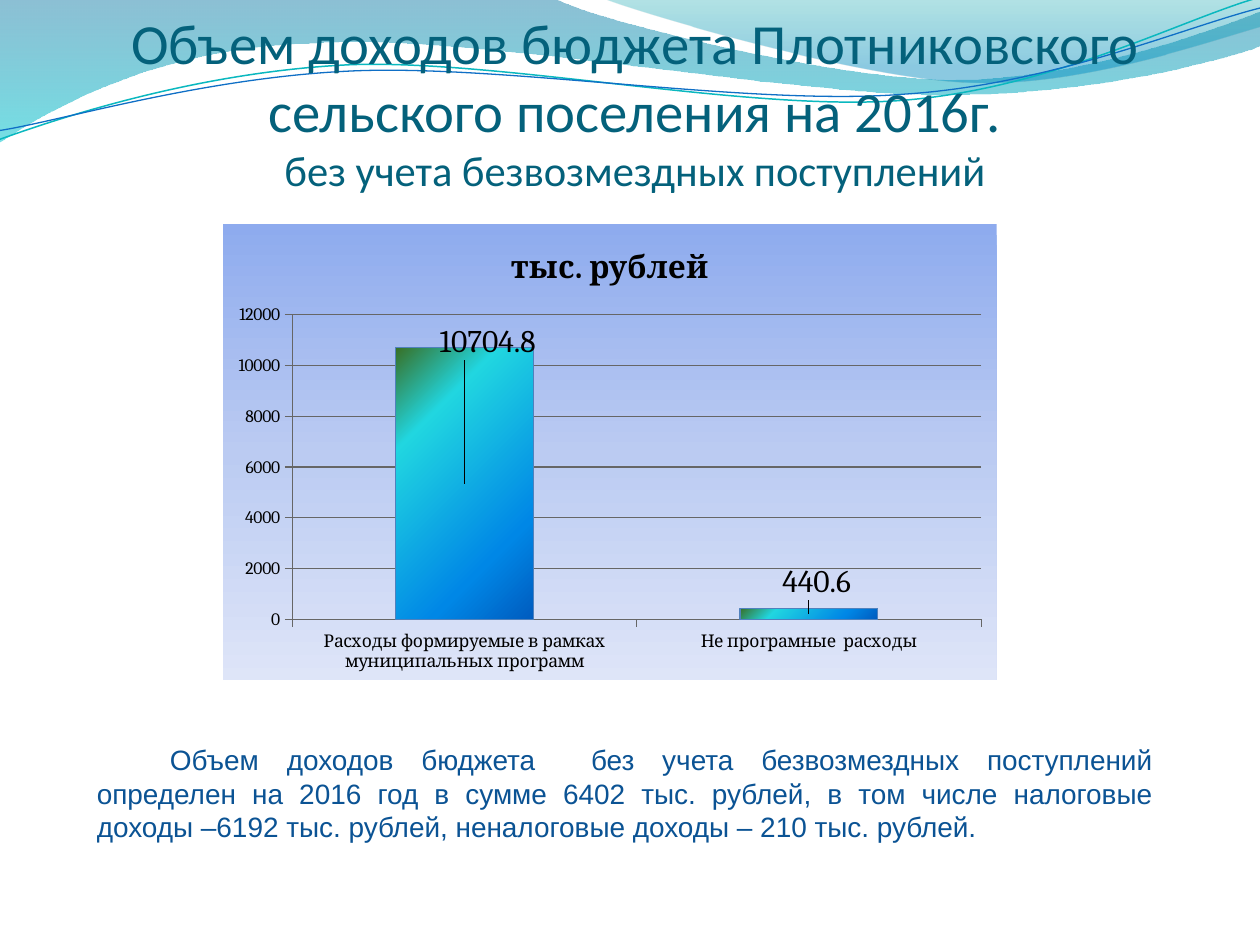
from dataclasses import dataclass

from lxml import etree
from pptx import Presentation
from pptx.chart.data import CategoryChartData
from pptx.dml.color import RGBColor
from pptx.enum.chart import XL_CHART_TYPE, XL_LABEL_POSITION, XL_TICK_MARK
from pptx.enum.text import MSO_ANCHOR, MSO_AUTO_SIZE, PP_ALIGN
from pptx.oxml import parse_xml
from pptx.oxml.ns import nsdecls, qn
from pptx.util import Inches, Pt

COLUMN_STACKED = XL_CHART_TYPE.COLUMN_STACKED
LABEL_CENTER = XL_LABEL_POSITION.CENTER
TICK_OUTSIDE = XL_TICK_MARK.OUTSIDE
ANCHOR_BOTTOM, ANCHOR_MIDDLE = MSO_ANCHOR.BOTTOM, MSO_ANCHOR.MIDDLE
ALIGN_CENTER, ALIGN_JUSTIFY = PP_ALIGN.CENTER, PP_ALIGN.JUSTIFY
FIT_NONE, FIT_SHAPE = MSO_AUTO_SIZE.NONE, MSO_AUTO_SIZE.SHAPE_TO_FIT_TEXT


@dataclass(frozen=True)
class Theme:
    title_color = RGBColor.from_string("04617B")
    body_color = RGBColor.from_string("0B5394")
    chart_text = RGBColor.from_string("000000")
    axis_line = RGBColor.from_string("666666")
    bar_line = RGBColor.from_string("4F81BD")
    teal_line = RGBColor.from_string("0AB8BF")
    blue_line = RGBColor.from_string("0F6FC6")
    # Gradient stops: position, colour, opacity (position and opacity in percent)
    left_wave = [(0, "0074A1", 45), (100, "00C6CF", 55)]
    right_wave = [(0, "00A1A9", 30), (80, "008BBF", 45)]
    chart_area = [(0, "8EABEE", 100), (50, "BBCBF2", 100), (100, "DEE5F8", 100)]
    bars = [(0, "387026", 100), (25, "21D6E0", 100),
            (75, "0087E6", 100), (100, "005CBF", 100)]
    title_font, body_font, chart_font = "Calibri", "Arial", "Cambria"
    title_size, subtitle_size, body_size = Pt(32.4), Pt(24.3), Pt(16)
    axis_size, label_size = Pt(10), Pt(18)


theme = Theme()


def set_gradient(properties, stops, angle):
    """Swap the noFill in a shape-properties element for a linear gradient."""
    gradient = etree.Element(qn("a:gradFill"), rotWithShape="1")
    stop_list = etree.SubElement(gradient, qn("a:gsLst"))
    for position, color, opacity in stops:
        stop = etree.SubElement(stop_list, qn("a:gs"), pos=str(position * 1000))
        rgb = etree.SubElement(stop, qn("a:srgbClr"), val=color)
        if opacity < 100:
            etree.SubElement(rgb, qn("a:alpha"), val=str(opacity * 1000))
    etree.SubElement(gradient, qn("a:lin"), ang=str(angle * 60000), scaled="0")
    properties.replace(properties.find(qn("a:noFill")), gradient)


def add_curve(slide, segments, closed):
    """Draw an outline; 2-number segments are points, 6-number ones are Béziers."""
    anchors = [(Inches(segment[-2]), Inches(segment[-1])) for segment in segments]
    builder = slide.shapes.build_freeform(*anchors[0], scale=1.0)
    builder.add_line_segments(anchors[1:], close=closed)
    shape = builder.convert_to_shape()
    shape.shadow.inherit = False
    shape.fill.background()
    lines = list(shape._element.iter(qn("a:lnTo")))
    for segment, line in zip(segments[1:], lines):
        if len(segment) == 2:
            continue
        bezier = etree.Element(qn("a:cubicBezTo"))
        for x, y in zip(segment[::2], segment[1::2]):
            etree.SubElement(bezier, qn("a:pt"), x=str(Inches(x) - shape.left),
                             y=str(Inches(y) - shape.top))
        line.getparent().replace(line, bezier)
    return shape


presentation = Presentation()
presentation.slide_width, presentation.slide_height = Inches(10), Inches(7.5)
slide = presentation.slides.add_slide(presentation.slide_layouts[5])

# Waves across the top
left_wave = [
    (0, 0), (4.4, -0.01),
    (4.76, 0.17, 6.64, 0.63, 7.58, 0.63), (8.53, 0.63, 9.58, 0.26, 10, 0.09),
    (10.01, 0.36),
    (9.83, 0.44, 8.7, 0.76, 7.46, 0.75), (6.22, 0.75, 3.82, 0.28, 2.57, 0.34),
    (1.29, 0.36, 0.46, 0.83, -0.01, 1.13),
]
right_wave = [
    (4.79, -0.01),
    (5.09, 0.11, 6.82, 0.62, 7.69, 0.65), (8.56, 0.69, 9.61, 0.32, 10, 0.21),
    (10, 0),
]
for outline, stops in ((left_wave, theme.left_wave), (right_wave, theme.right_wave)):
    wave = add_curve(slide, outline, closed=True)
    wave.line.fill.background()
    set_gradient(wave._element.spPr, stops, 90)

teal_curve = [
    (-0.02, 0.87), (0.47, 0.72, 1.58, 0.41, 2.78, 0.41),
    (3.96, 0.42, 5.91, 0.93, 7.12, 0.9), (8.32, 0.87, 9.4, 0.36, 10, 0.22),
]
blue_curve = [
    (-0.02, 0.8), (0.46, 0.75, 1.64, 0.45, 2.83, 0.46),
    (4.03, 0.47, 5.96, 0.89, 7.16, 0.85), (8.35, 0.83, 9.42, 0.42, 10.02, 0.3),
]
for outline, color, width in ((teal_curve, theme.teal_line, 0.85),
                              (blue_curve, theme.blue_line, 0.75)):
    curve = add_curve(slide, outline, closed=False)
    curve.rotation = 357.3
    curve.line.color.rgb = color
    curve.line.width = Pt(width)

# Chart
chart_data = CategoryChartData()
chart_data.categories = ["Расходы формируемые в рамках муниципальных программ",
                         "Не програмные  расходы"]
chart_data.add_series("тыс. рублей", [10704.8, 440.6])
chart = slide.shapes.add_chart(COLUMN_STACKED, Inches(1.77), Inches(1.78),
                               Inches(6.14), Inches(3.62), chart_data).chart
chart.has_legend = False
chart.font.name = theme.chart_font
chart.font.size = theme.axis_size
chart.font.color.rgb = theme.chart_text
chart_area = parse_xml(f'<c:spPr {nsdecls("c", "a")}><a:noFill/>'
                       '<a:ln><a:noFill/></a:ln></c:spPr>')
chart._chartSpace.find(qn("c:txPr")).addprevious(chart_area)
set_gradient(chart_area, theme.chart_area, 90)

chart.has_title = True
chart.chart_title.include_in_layout = False
chart_heading = chart.chart_title.text_frame
chart_heading.text = "тыс. рублей"
heading_font = chart_heading.paragraphs[0].font
heading_font.name = theme.chart_font
heading_font.size = theme.label_size
heading_font.bold = True
heading_font.color.rgb = theme.chart_text

chart.value_axis.has_major_gridlines = True
for axis in (chart.category_axis, chart.value_axis):
    axis.major_tick_mark = TICK_OUTSIDE
    axis.format.line.color.rgb = theme.axis_line
chart.value_axis.major_gridlines.format.line.color.rgb = theme.axis_line

plot = chart.plots[0]
plot.gap_width, plot.overlap = 150, 100
plot.vary_by_categories = False
series = plot.series[0]
series.format.fill.background()
series.format.line.color.rgb = theme.bar_line
series.format.line.width = Pt(0.75)
set_gradient(series._element.find(qn("c:spPr")), theme.bars, 45)

# Labels are moved from the bar centres by fractions of the chart size
label_offsets = [(0.03, -0.31), (0.01, -0.07)]
series.data_labels.show_value = True
series.data_labels.font.size = theme.label_size
for index in range(len(label_offsets)):
    label = series.points[index].data_label
    label.font.size = theme.label_size
    label.position = LABEL_CENTER
for label, (x, y) in zip(series._element.iter(qn("c:dLbl")), label_offsets):
    label.insert(1, parse_xml(
        f'<c:layout {nsdecls("c")}><c:manualLayout>'
        f'<c:x val="{x}"/><c:y val="{y}"/></c:manualLayout></c:layout>'))
labels = series._element.find(qn("c:dLbls"))
for leader_lines in labels.findall(qn("c:showLeaderLines")):
    labels.remove(leader_lines)
labels.append(parse_xml(
    f'<c:extLst {nsdecls("c")}><c:ext uri="{{CE6537A1-D6FC-4f65-9D91-7224C49458BB}}" '
    'xmlns:c15="http://schemas.microsoft.com/office/drawing/2012/chart">'
    '<c15:showLeaderLines val="0"/></c:ext></c:extLst>'))

# Title
title = slide.shapes.title
slide.shapes._spTree.append(title._element)
title.left, title.top = Inches(0.5), Inches(0.77)
title.width, title.height = Inches(9.08), Inches(0.78)
frame = title.text_frame
frame.word_wrap = True
frame.auto_size = FIT_NONE
frame.vertical_anchor = ANCHOR_BOTTOM
frame.margin_left = frame.margin_right = frame.margin_bottom = 0
frame.margin_top = Inches(0.05)
paragraph = frame.paragraphs[0]
paragraph.alignment = ALIGN_CENTER
paragraph.font.name = theme.title_font
paragraph.font.color.rgb = theme.title_color
run = paragraph.add_run()
run.text = "Объем доходов бюджета Плотниковского сельского поселения на 2016г."
run.font.size = theme.title_size
paragraph.add_line_break()
run = paragraph.add_run()
run.text = "без учета безвозмездных поступлений"
run.font.size = theme.subtitle_size

# Summary
summary = slide.shapes.add_textbox(Inches(0.67), Inches(5.84), Inches(8.58), Inches(0.91))
frame = summary.text_frame
frame.word_wrap = True
frame.auto_size = FIT_SHAPE
frame.vertical_anchor = ANCHOR_MIDDLE
paragraph = frame.paragraphs[0]
paragraph.text = ("Объем доходов бюджета  без учета безвозмездных поступлений определен "
                  "на 2016 год в сумме 6402 тыс. рублей, в том числе налоговые доходы "
                  "–6192 тыс. рублей, неналоговые доходы – 210 тыс. рублей.")
paragraph.alignment = ALIGN_JUSTIFY
paragraph.font.name = theme.body_font
paragraph.font.size = theme.body_size
paragraph.font.color.rgb = theme.body_color
paragraph._p.get_or_add_pPr().set("indent", str(Inches(0.58)))

presentation.save("out.pptx")
